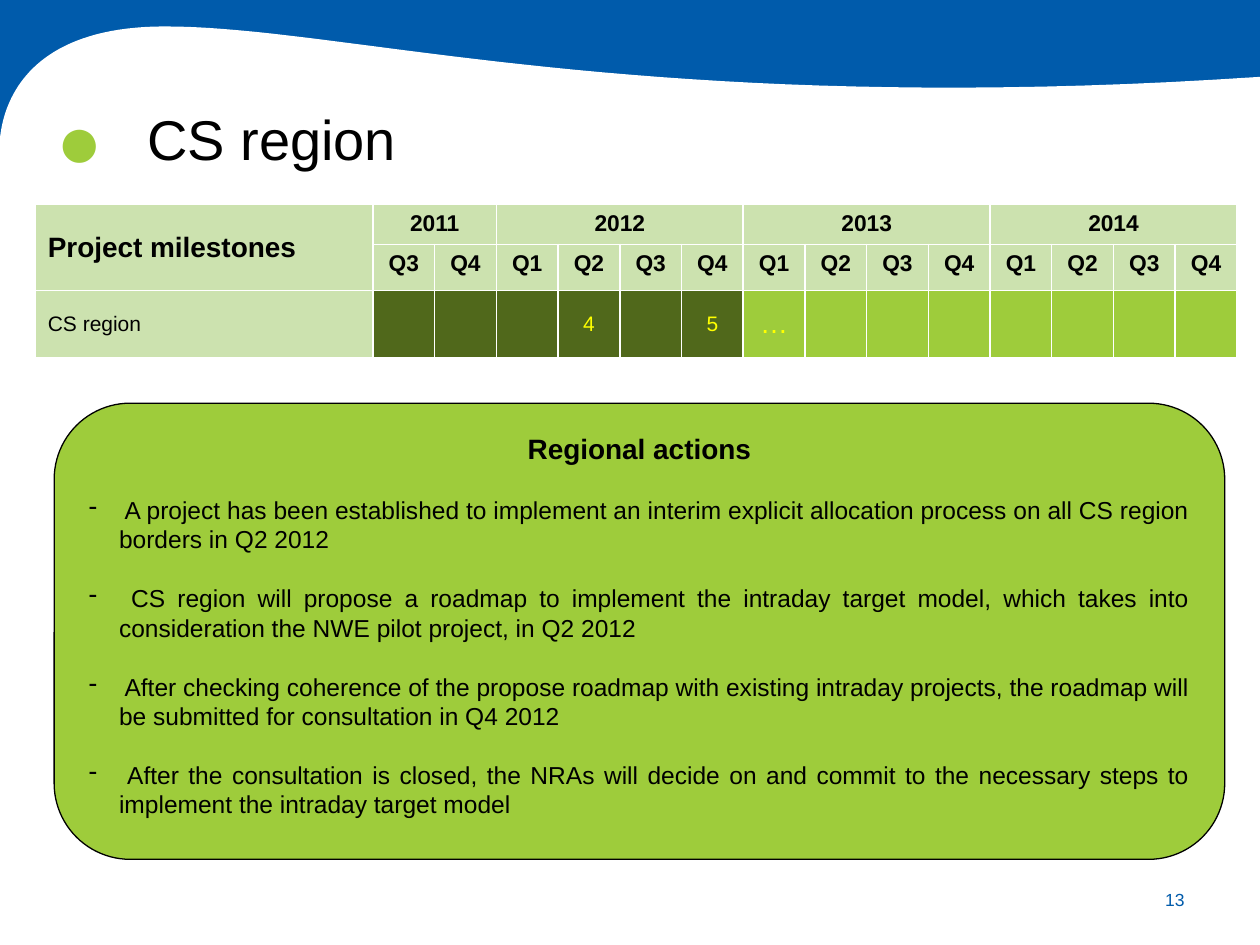
from lxml import etree
from pptx import Presentation
from pptx.dml.color import RGBColor
from pptx.enum import shapes, text
from pptx.oxml import ns
from pptx.util import Inches, Pt

COLOURS = {
    "blue": "005BAB", "white": "FFFFFF", "black": "000000", "yellow": "FFFF00",
    "green": "9ECC3B", "pale": "CCE2AF", "dark": "50681B",
}
FONT = "Arial"
YEARS = [("2011", ["Q3", "Q4"])] + [
    (year, ["Q1", "Q2", "Q3", "Q4"]) for year in ("2012", "2013", "2014")]
MILESTONES = {4: ("4", 12), 6: ("5", 12), 7: ("…", 16)}
DARK_QUARTERS = 6
ACTIONS = [
    "A project has been established to implement an interim explicit allocation "
    "process on all CS region borders in Q2 2012",
    "CS region will propose a roadmap to implement the intraday target model, "
    "which takes into consideration the NWE pilot project, in Q2 2012",
    "After checking coherence of the propose roadmap with existing intraday "
    "projects, the roadmap will be submitted for consultation in Q4 2012",
    "After the consultation is closed, the NRAs will decide on and commit to the "
    "necessary steps to implement the intraday target model",
]
LEFT, CENTER, RIGHT, JUSTIFY = (
    text.PP_ALIGN.LEFT, text.PP_ALIGN.CENTER, text.PP_ALIGN.RIGHT, text.PP_ALIGN.JUSTIFY)
TOP, MIDDLE, BOTTOM = (
    text.MSO_ANCHOR.TOP, text.MSO_ANCHOR.MIDDLE, text.MSO_ANCHOR.BOTTOM)


def rgb(name):
    return RGBColor.from_string(COLOURS[name])


def paint(shape, fill):
    shape.shadow.inherit = False
    shape.fill.solid()
    shape.fill.fore_color.rgb = rgb(fill)
    shape.line.fill.background()


def write(paragraph, words, size, colour="black", bold=False, align=LEFT):
    paragraph.alignment = align
    run = paragraph.add_run()
    run.text = words
    run.font.name = FONT
    run.font.size = Pt(size)
    run.font.bold = bold
    run.font.color.rgb = rgb(colour)


def add_label(slide, box, words, size, colour="black", align=LEFT, anchor=TOP, wrap=True):
    frame = slide.shapes.add_textbox(*map(Inches, box)).text_frame
    frame.word_wrap = wrap
    frame.vertical_anchor = anchor
    write(frame.paragraphs[0], words, size, colour, align=align)
    return frame.paragraphs[0]


def bezier(start, control1, control2, end, steps=40):
    """Points along a cubic curve, without its start."""
    points = []
    for step in range(1, steps + 1):
        t = step / steps
        weights = ((1 - t) ** 3, 3 * t * (1 - t) ** 2, 3 * t * t * (1 - t), t ** 3)
        points.append(tuple(
            Inches(sum(w * v for w, v in zip(weights, values)))
            for values in zip(start, control1, control2, end)))
    return points


def add_wave(slide):
    """Blue band whose lower edge is cut by the curved white page."""
    band = slide.shapes.add_shape(
        shapes.MSO_SHAPE.RECTANGLE, 0, 0, Inches(10), Inches(1.15))
    paint(band, "blue")
    edge = bezier((0, 1.1), (0.03, 0.8), (0.23, 0.21), (1.31, 0.21))
    edge += bezier((1.31, 0.21), (2.76, 0.21), (5.1, 0.94), (10, 0.61))
    page = slide.shapes.build_freeform(0, Inches(1.1))
    page.add_line_segments(
        edge + [(Inches(10), Inches(7.5)), (0, Inches(7.5))], close=True)
    paint(page.convert_to_shape(), "white")


def style_cell(cell, fill):
    """White borders on every side and a plain fill."""
    properties = cell._tc.get_or_add_tcPr()
    for side in ("lnL", "lnR", "lnT", "lnB"):
        border = etree.SubElement(properties, ns.qn(f"a:{side}"), w=str(Pt(1)))
        solid = etree.SubElement(border, ns.qn("a:solidFill"))
        etree.SubElement(solid, ns.qn("a:srgbClr"), val=COLOURS["white"])
    cell.fill.solid()
    cell.fill.fore_color.rgb = rgb(fill)


def fill_cell(cell, words, size, before=0.0, anchor=MIDDLE, **style):
    """Write into a cell; before is the space above as a share of the size."""
    cell.vertical_anchor = anchor
    paragraph = cell.text_frame.paragraphs[0]
    paragraph.space_before = Pt(before * size)
    write(paragraph, words, size, **style)


def add_timeline(slide):
    quarters = [quarter for _, names in YEARS for quarter in names]
    table = slide.shapes.add_table(
        3, len(quarters) + 1, Inches(0.28), Inches(1.62), Inches(9.53), Inches(1.16)).table
    for row, height in zip(table.rows, (0.32, 0.32, 0.53)):
        row.height = Inches(height)
    for index, column in enumerate(table.columns):
        column.width = Inches(0.49 if index else 2.68)

    for row in range(3):
        for column in range(len(quarters) + 1):
            fill = "pale"
            if row == 2 and column:
                fill = "dark" if column <= DARK_QUARTERS else "green"
            style_cell(table.cell(row, column), fill)

    table.cell(0, 0).merge(table.cell(1, 0))
    fill_cell(table.cell(0, 0), "Project milestones", 16, 0.2, bold=True)
    fill_cell(table.cell(2, 0), "CS region", 12, 0.2)
    first = 1
    for year, names in YEARS:
        heading = table.cell(0, first)
        heading.merge(table.cell(0, first + len(names) - 1))
        fill_cell(heading, year, 13, anchor=TOP, bold=True, align=CENTER)
        first += len(names)
    for column, quarter in enumerate(quarters, 1):
        fill_cell(table.cell(1, column), quarter, 13, 0.2, TOP, bold=True, align=CENTER)
    for column, (mark, size) in MILESTONES.items():
        fill_cell(table.cell(2, column), mark, size, 0.3, colour="yellow", align=CENTER)


def add_dash(paragraph):
    properties = paragraph._p.get_or_add_pPr()
    indent = Inches(0.24)
    properties.set("marL", str(indent))
    properties.set("indent", str(-indent))
    etree.SubElement(properties, ns.qn("a:buChar"), char="-")


def add_actions(slide):
    panel = slide.shapes.add_shape(
        shapes.MSO_SHAPE.ROUNDED_RECTANGLE,
        Inches(0.43), Inches(3.2), Inches(9.29), Inches(3.62))
    paint(panel, "green")
    panel.line.color.rgb = rgb("black")
    panel.line.width = Pt(0.75)
    frame = panel.text_frame
    frame.word_wrap = True
    frame.vertical_anchor = TOP
    write(frame.paragraphs[0], "Regional actions", 16, bold=True, align=CENTER)
    for action in ACTIONS:
        paragraph = frame.add_paragraph()
        write(paragraph, f" {action}", 14, align=JUSTIFY)
        paragraph.line_spacing = paragraph.space_before = Pt(16.84)
        add_dash(paragraph)


def main():
    deck = Presentation()
    deck.slide_width, deck.slide_height = Inches(10), Inches(7.5)
    slide = deck.slides.add_slide(deck.slide_layouts[6])
    add_wave(slide)
    add_label(slide, (8.94, 6.94, 0.56, 0.4), "13", 10, "blue", RIGHT, MIDDLE)
    add_label(slide, (0.35, 0.57, 0.55, 0.94), "●", 44, "green", CENTER, BOTTOM, wrap=False)
    title = add_label(slide, (1.07, 0.84, 8.57, 1.14), "CS region", 32)
    title.line_spacing = 0.9
    add_actions(slide)
    add_timeline(slide)
    deck.save("out.pptx")


if __name__ == "__main__":
    main()
